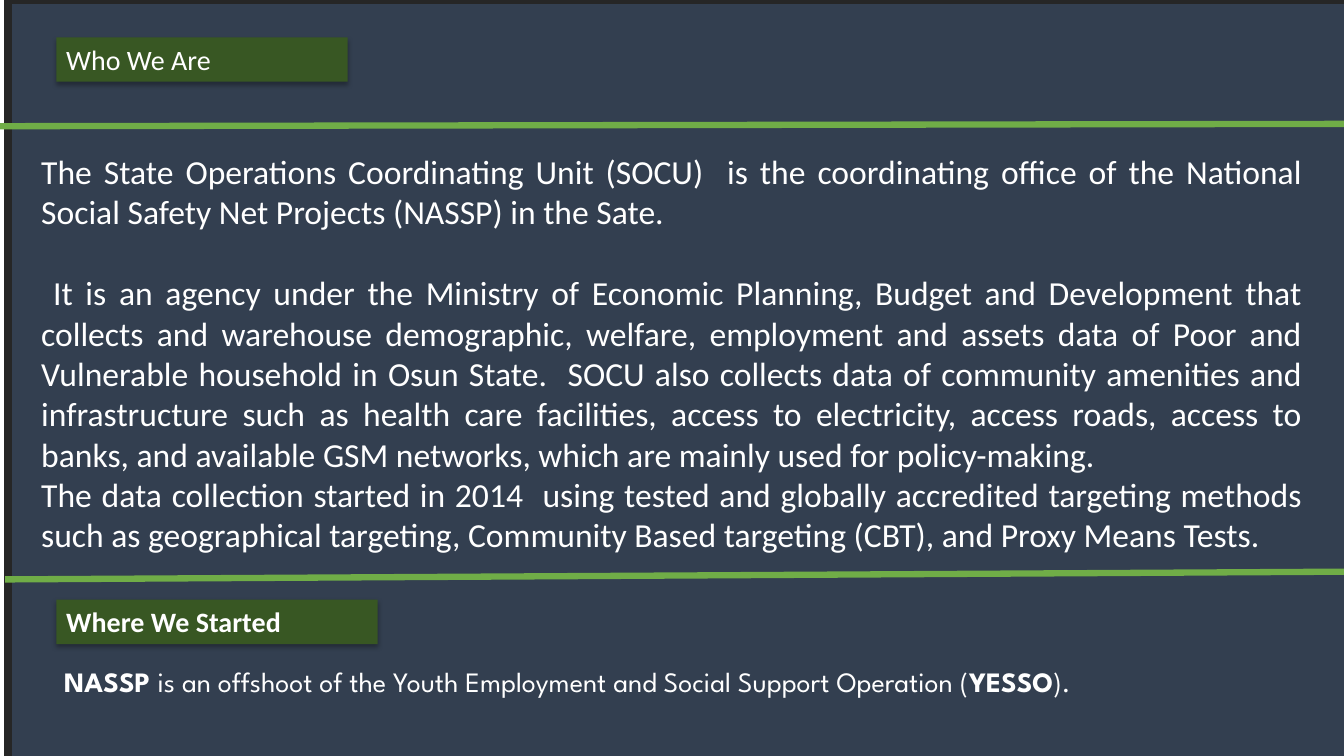
from dataclasses import dataclass

from lxml import etree
from pptx import Presentation
from pptx import util as u
from pptx.dml.color import RGBColor
from pptx.enum import shapes, text
from pptx.oxml import ns


@dataclass(frozen=True)
class Theme:
    panel: RGBColor = RGBColor(0x33, 0x3F, 0x50)
    panel_edge: RGBColor = RGBColor(0x26, 0x26, 0x26)
    label: RGBColor = RGBColor(0x38, 0x57, 0x23)
    divider: RGBColor = RGBColor(0x70, 0xAD, 0x47)
    text: RGBColor = RGBColor(0xFF, 0xFF, 0xFF)
    font: str = "Calibri"
    note_font: str = "League Spartan"
    body_size: u.Pt = u.Pt(24)
    small_size: u.Pt = u.Pt(20)


@dataclass(frozen=True)
class Box:
    """A rectangle on the slide, in centimetres."""
    left: float
    top: float
    width: float
    height: float

    def lengths(self) -> tuple:
        return tuple(u.Cm(v) for v in (self.left, self.top, self.width, self.height))


@dataclass(frozen=True)
class Label:
    caption: str
    box: Box
    bold: bool


@dataclass(frozen=True)
class Divider:
    """A line across the slide, in centimetres."""
    left: float
    left_y: float
    right: float
    right_y: float


@dataclass(frozen=True)
class BodyParagraph:
    wording: str
    space_before: float = 0
    first_line_indent: float = 0


THEME = Theme()
PANEL = Box(0.2, 0, 34.65, 19.56)
BODY_BOX = Box(0.79, 3.68, 32.28, 10.52)
NOTE_BOX = Box(1.37, 16.61, 32.16, 1.12)

LABELS = [
    Label("Who We Are", Box(1.42, 0.94, 7.34, 1.12), False),
    Label("Where We Started", Box(1.42, 15.11, 8.1, 1.12), True),
]
DIVIDERS = [
    Divider(0.13, 14.6, 34.77, 14.4),
    Divider(0, 3.18, 34.65, 3.12),
]
BODY = [
    BodyParagraph(
        "The State Operations Coordinating Unit (SOCU)  is the coordinating office of "
        "the National Social Safety Net Projects (NASSP) in the Sate."),
    BodyParagraph(
        "It is an agency under the Ministry of Economic Planning, Budget and Development "
        "that collects and warehouse demographic, welfare, employment and assets data of "
        "Poor and Vulnerable household in Osun State.  SOCU also collects data of "
        "community amenities and infrastructure such as health care facilities, access to "
        "electricity, access roads, access to banks, and available GSM networks, which "
        "are mainly used for policy-making.",
        space_before=29, first_line_indent=0.3),
    BodyParagraph(
        "The data collection started in 2014  using tested and globally accredited "
        "targeting methods such as geographical targeting, Community Based targeting "
        "(CBT), and Proxy Means Tests."),
]
NOTE = [
    ("NASSP ", True),
    ("is an offshoot of the Youth Employment and Social Support Operation (", False),
    ("YESSO", True),
    (").", False),
]


def style_paragraph(paragraph, size: u.Pt, font_name: str) -> None:
    paragraph.font.size = size
    paragraph.font.name = font_name
    paragraph.font.color.rgb = THEME.text


def add_rectangle(slide, box: Box, fill: RGBColor):
    rectangle = slide.shapes.add_shape(shapes.MSO_SHAPE.RECTANGLE, *box.lengths())
    rectangle.shadow.inherit = False
    rectangle.fill.solid()
    rectangle.fill.fore_color.rgb = fill
    rectangle.line.fill.background()
    return rectangle


def add_panel(slide) -> None:
    panel = add_rectangle(slide, PANEL, THEME.panel)
    panel.line.color.rgb = THEME.panel_edge
    panel.line.width = u.Pt(6)


def add_drop_shadow(shape) -> None:
    """Fill the shape's empty effect list with a soft shadow below it."""
    effects = shape._element.spPr.find(ns.qn("a:effectLst"))
    shadow = etree.SubElement(
        effects, ns.qn("a:outerShdw"), blurRad=str(u.Pt(3.5)), dist=str(u.Pt(2.2)),
        dir="5400000", algn="t", rotWithShape="0")
    color = etree.SubElement(shadow, ns.qn("a:srgbClr"), val="000000")
    etree.SubElement(color, ns.qn("a:alpha"), val="32000")


def add_label(slide, label: Label) -> None:
    shape = add_rectangle(slide, label.box, THEME.label)
    add_drop_shadow(shape)
    shape.text_frame.word_wrap = True
    shape.text_frame.vertical_anchor = text.MSO_ANCHOR.TOP
    paragraph = shape.text_frame.paragraphs[0]
    paragraph.text = label.caption
    paragraph.alignment = text.PP_ALIGN.LEFT
    style_paragraph(paragraph, THEME.small_size, THEME.font)
    paragraph.font.bold = label.bold


def add_text_frame(slide, box: Box):
    frame = slide.shapes.add_textbox(*box.lengths()).text_frame
    frame.word_wrap = True
    frame.auto_size = text.MSO_AUTO_SIZE.SHAPE_TO_FIT_TEXT
    return frame


def add_body(slide) -> None:
    frame = add_text_frame(slide, BODY_BOX)
    for index, item in enumerate(BODY):
        paragraph = frame.add_paragraph() if index else frame.paragraphs[0]
        paragraph.text = item.wording
        paragraph.alignment = text.PP_ALIGN.JUSTIFY
        if item.space_before:
            paragraph.space_before = u.Pt(item.space_before)
        if item.first_line_indent:
            properties = paragraph._p.get_or_add_pPr()
            properties.set("indent", str(u.Cm(item.first_line_indent)))
        style_paragraph(paragraph, THEME.body_size, THEME.font)


def add_note(slide) -> None:
    paragraph = add_text_frame(slide, NOTE_BOX).paragraphs[0]
    style_paragraph(paragraph, THEME.small_size, THEME.note_font)
    for wording, bold in NOTE:
        run = paragraph.add_run()
        run.text = wording
        run.font.bold = bold


def add_divider(slide, divider: Divider) -> None:
    connector = slide.shapes.add_connector(
        shapes.MSO_CONNECTOR.STRAIGHT, u.Cm(divider.left), u.Cm(divider.left_y),
        u.Cm(divider.right), u.Cm(divider.right_y))
    connector.line.color.rgb = THEME.divider
    connector.line.width = u.Pt(4.5)
    etree.SubElement(connector._element.spPr, ns.qn("a:effectLst"))


def main() -> None:
    presentation = Presentation()
    presentation.slide_width = u.Cm(33.87)
    presentation.slide_height = u.Cm(19.05)
    slide = presentation.slides.add_slide(presentation.slide_layouts[6])
    add_panel(slide)
    add_body(slide)
    add_note(slide)
    for divider in DIVIDERS:
        add_divider(slide, divider)
    for label in LABELS:
        add_label(slide, label)
    presentation.save("out.pptx")


if __name__ == "__main__":
    main()
